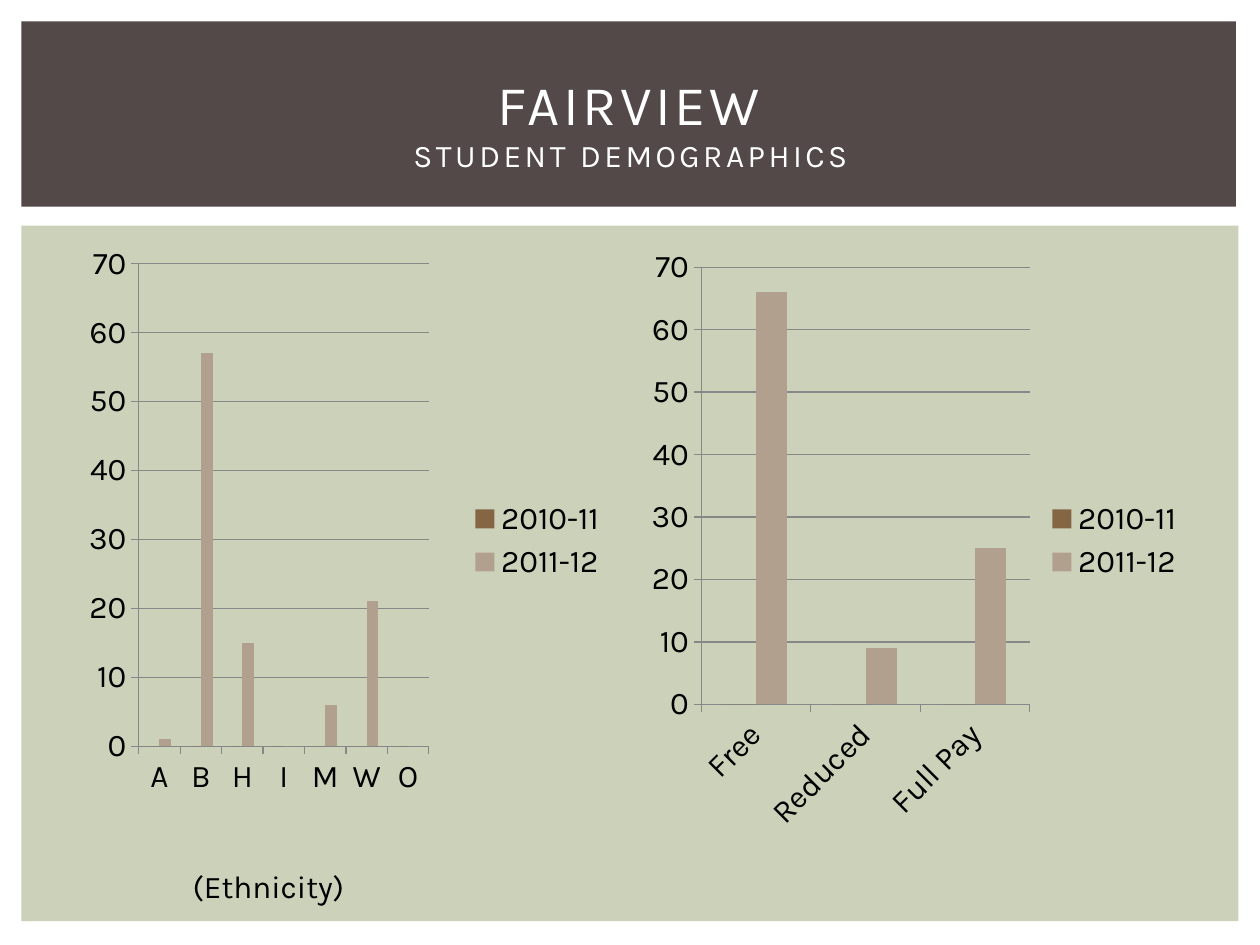
from lxml import etree
from pptx import Presentation
from pptx.chart.data import CategoryChartData
from pptx.dml.color import RGBColor
from pptx.enum.chart import XL_CHART_TYPE, XL_LEGEND_POSITION, XL_TICK_MARK
from pptx.enum.shapes import MSO_SHAPE
from pptx.enum.text import MSO_ANCHOR, MSO_AUTO_SIZE, PP_ALIGN
from pptx.oxml.ns import qn
from pptx.util import Inches, Pt

WHITE = RGBColor(0xFF, 0xFF, 0xFF)
BLACK = RGBColor(0, 0, 0)
SAGE = RGBColor(0xCC, 0xD1, 0xB9)
DARK_BROWN = RGBColor(0x53, 0x49, 0x49)
BROWN = RGBColor(0x84, 0x66, 0x45)
TAN = RGBColor(0xB2, 0xA0, 0x8F)
GRAY = RGBColor(0x87, 0x87, 0x87)
FONT = "Karla"

PANELS = [(SAGE, (0.17, 1.79, 9.66, 5.52)), (DARK_BROWN, (0.17, 0.17, 9.64, 1.47))]
TITLE_LINES = [("FAIRVIEW", 32), ("STUDENT DEMOGRAPHICS", 18)]
TITLE_BOX = (0.42, 0.39, 9.17, 1.15)
CAPTION, CAPTION_BOX = "(Ethnicity)", (0.67, 6.83, 2.92, 0.4)

SERIES_COLORS = {"2010-11": BROWN, "2011-12": TAN}
CHARTS = [
    {"categories": ["A", "B", "H", "I", "M", "W", "O"],
     "values": [(0, 0, 0, 0, 0, 0, 0), (1, 57, 15, 0, 6, 21, 0)],
     "plot": (0.136, 0.044, 0.521, 0.795), "label_angle": 0},
    {"categories": ["Free", "Reduced", "Full Pay"],
     "values": [(0, 0, 0), (66, 9, 25)],
     "plot": (0.11, 0.05, 0.59, 0.72), "label_angle": -45},
]
CHART_LEFT, CHART_TOP, CHART_WIDTH, CHART_HEIGHT = 0.5, 1.88, 4.42, 4.82
CHART_STEP = CHART_WIDTH + 0.16


def box(lengths):
    return [Inches(length) for length in lengths]


def style_font(font, size, color):
    for name, value in {"name": FONT, "size": Pt(size), "bold": False}.items():
        setattr(font, name, value)
    font.color.rgb = color


def add_panel(slide, color, lengths):
    panel = slide.shapes.add_shape(MSO_SHAPE.RECTANGLE, *box(lengths))
    panel.shadow.inherit = False
    panel.fill.solid()
    panel.fill.fore_color.rgb = color
    panel.line.fill.background()


def fix_plot_area(chart, shares):
    """Set the inner plot area as shares (x, y, w, h) of the chart."""
    plot_area = chart.plots[0]._element.getparent()
    layout = plot_area.find(qn("c:layout"))
    if layout is None:
        layout = etree.Element(qn("c:layout"))
        plot_area.insert(0, layout)
    manual = etree.SubElement(layout, qn("c:manualLayout"))
    settings = [("layoutTarget", "inner"), ("xMode", "edge"), ("yMode", "edge")]
    settings += zip("xywh", shares)
    for tag, value in settings:
        etree.SubElement(manual, qn(f"c:{tag}")).set("val", str(value))


def add_column_chart(slide, column, content):
    data = CategoryChartData(number_format="General")
    data.categories = content["categories"]
    for name, values in zip(SERIES_COLORS, content["values"]):
        data.add_series(name, values)
    left = CHART_LEFT + column * CHART_STEP
    chart = slide.shapes.add_chart(
        XL_CHART_TYPE.COLUMN_CLUSTERED,
        *box((left, CHART_TOP, CHART_WIDTH, CHART_HEIGHT)), data).chart
    style_font(chart.font, 18, BLACK)
    chart.has_title = False
    chart.has_legend = True
    chart.legend.position = XL_LEGEND_POSITION.RIGHT
    chart.legend.include_in_layout = False

    plot = chart.plots[0]
    plot.gap_width, plot.overlap, plot.vary_by_categories = 150, 0, False
    for series, color in zip(plot.series, SERIES_COLORS.values()):
        series.format.fill.solid()
        series.format.fill.fore_color.rgb = color

    category_axis, value_axis = chart.category_axis, chart.value_axis
    for axis in (category_axis, value_axis):
        axis.major_tick_mark = XL_TICK_MARK.OUTSIDE
        axis.minor_tick_mark = XL_TICK_MARK.NONE
        axis.format.line.color.rgb = GRAY
        style_font(axis.tick_labels.font, 18, BLACK)
    scale = {"minimum_scale": 0, "maximum_scale": 70, "major_unit": 10}
    for name, value in scale.items():
        setattr(value_axis, name, value)
    value_axis.has_major_gridlines = True
    value_axis.major_gridlines.format.line.color.rgb = GRAY
    body = category_axis._element.find(qn("c:txPr")).find(qn("a:bodyPr"))
    body.set("rot", str(content["label_angle"] * 60000))
    fix_plot_area(chart, content["plot"])


def fill_title(title):
    title.left, title.top, title.width, title.height = box(TITLE_BOX)
    title.text_frame.vertical_anchor = MSO_ANCHOR.MIDDLE
    paragraph = title.text_frame.paragraphs[0]
    paragraph.alignment = PP_ALIGN.CENTER
    for index, (text, size) in enumerate(TITLE_LINES):
        if index:
            paragraph.add_line_break()
        run = paragraph.add_run()
        run.text = text
        style_font(run.font, size, WHITE)
        run.font._element.set("spc", "200")
    title.element.getparent().append(title.element)  # in front of the panels


def add_caption(slide):
    frame = slide.shapes.add_textbox(*box(CAPTION_BOX)).text_frame
    frame.word_wrap = True
    frame.auto_size = MSO_AUTO_SIZE.SHAPE_TO_FIT_TEXT
    paragraph = frame.paragraphs[0]
    paragraph.alignment = PP_ALIGN.CENTER
    run = paragraph.add_run()
    run.text = CAPTION
    style_font(run.font, 18, BLACK)


def main():
    presentation = Presentation()
    presentation.slide_width, presentation.slide_height = box((10, 7.5))
    slide = presentation.slides.add_slide(presentation.slide_layouts[5])
    for color, lengths in PANELS:
        add_panel(slide, color, lengths)
    for column, content in enumerate(CHARTS):
        add_column_chart(slide, column, content)
    fill_title(slide.shapes.title)
    add_caption(slide)
    presentation.save("out.pptx")


if __name__ == "__main__":
    main()
